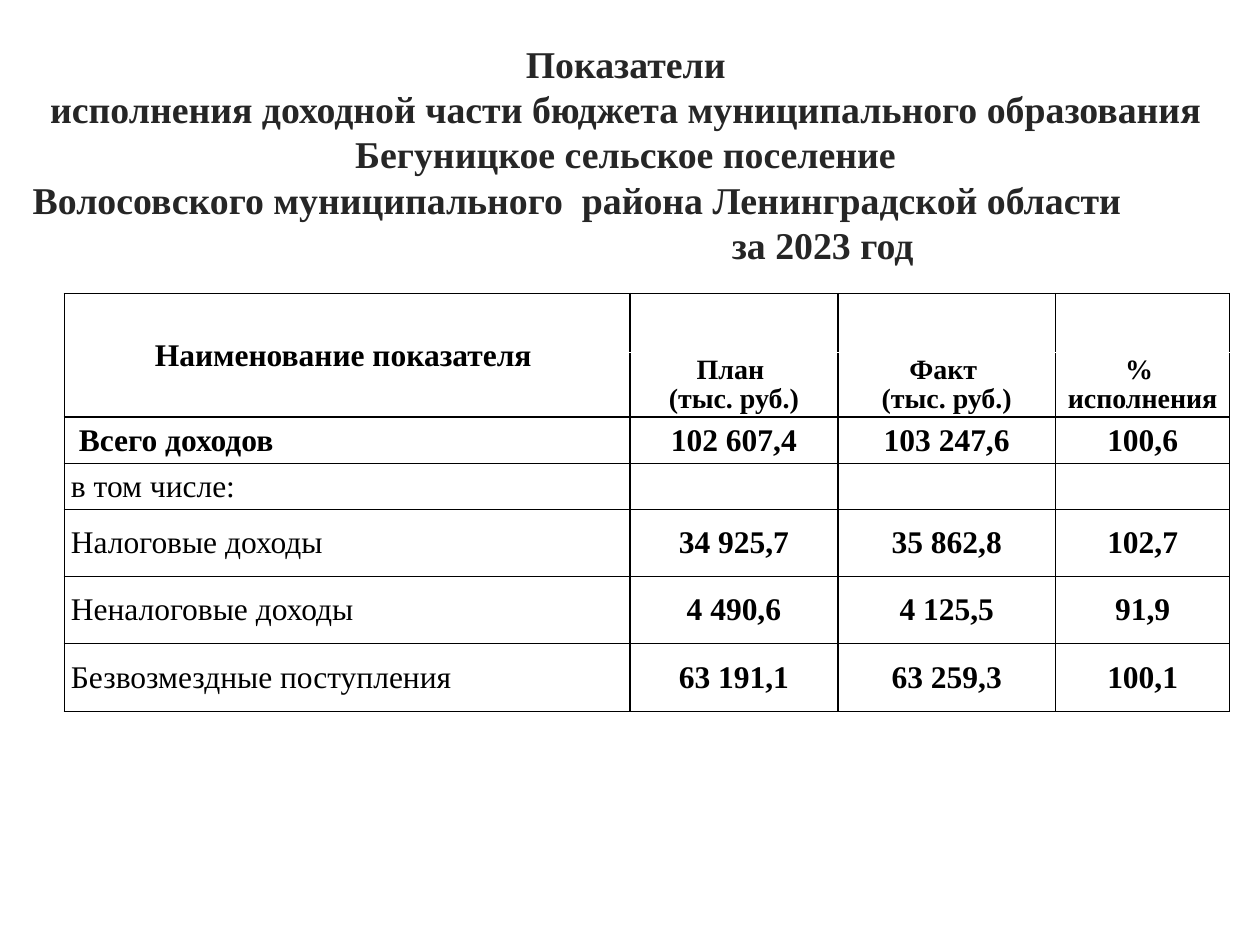
from lxml import etree
from pptx import Presentation
from pptx import util as u
from pptx.dml.color import RGBColor
from pptx.enum import text
from pptx.oxml.ns import qn

COLORS = {"title": "262626", "body": "000000", "cell": "FFFFFF", "border": "000000"}
FONT = "Times New Roman"
LEFT, CENTER = text.PP_ALIGN.LEFT, text.PP_ALIGN.CENTER

# Title lines: wording, alignment, left indent in cm
TITLE = [
    ("Показатели", CENTER, 0),
    ("исполнения доходной части бюджета муниципального образования", CENTER, 0),
    ("Бегуницкое сельское поселение", CENTER, 0),
    ("Волосовского муниципального  района Ленинградской области", LEFT, 0),
    ("за 2023 год", CENTER, 7.94),
]

# The header takes two rows, with units in the lower one
HEADER = [
    ["Наименование показателя ", "", "", ""],
    ["", "План \n(тыс. руб.)", "Факт \n(тыс. руб.)", "% \nисполнения"],
]
INCOME = [
    [" Всего доходов", "102 607,4", "103 247,6", "100,6"],
    ["в том числе:", "", "", ""],
    ["Налоговые доходы", "34 925,7", "35 862,8", "102,7"],
    ["Неналоговые доходы", "4 490,6", "4 125,5", "91,9"],
    ["Безвозмездные поступления", "63 191,1", "63 259,3", "100,1"],
]
COLUMN_WIDTHS = [11.4, 4.19, 4.39, 3.51]
ROW_HEIGHTS = [1.19, 1.25, 0.93, 0.93, 1.35, 1.35, 1.37]


def style(paragraph, size, color, bold, align):
    paragraph.alignment = align
    font = paragraph.font
    font.name, font.size, font.bold = FONT, u.Pt(size), bold
    font.color.rgb = RGBColor.from_string(COLORS[color])


def add_title(slide):
    box = slide.shapes.add_textbox(u.Cm(0.41), u.Cm(0.58), u.Cm(24.41), u.Cm(4.93))
    frame = box.text_frame
    frame.word_wrap = True
    frame.vertical_anchor = text.MSO_ANCHOR.BOTTOM
    frame.text = "\n".join(line for line, _, _ in TITLE)
    for paragraph, (_, align, indent) in zip(frame.paragraphs, TITLE):
        style(paragraph, 21.6, "title", True, align)
        paragraph.line_spacing = u.Pt(25.9)
        if indent:
            paragraph._p.get_or_add_pPr().set("marL", str(u.Cm(indent)))


def set_borders(cell, sides):
    properties = cell._tc.get_or_add_tcPr()
    for position, side in enumerate(sides):
        line = etree.Element(qn(f"a:ln{side}"), w=str(u.Pt(1)))
        fill = etree.SubElement(line, qn("a:solidFill"))
        etree.SubElement(fill, qn("a:srgbClr"), val=COLORS["border"])
        properties.insert(position, line)  # borders come before the fill


def fill_cell(cell, wording, size, bold, align, sides="LRTB"):
    cell.margin_left = cell.margin_right = u.Cm(0.13)
    cell.margin_top = cell.margin_bottom = 0
    cell.vertical_anchor = text.MSO_ANCHOR.MIDDLE
    cell.fill.solid()
    cell.fill.fore_color.rgb = RGBColor.from_string(COLORS["cell"])
    set_borders(cell, sides)
    cell.text = wording
    for paragraph in cell.text_frame.paragraphs:
        style(paragraph, size, "body", bold, align)
        if size == 16:
            paragraph.line_spacing = 0.96


def add_income_table(slide):
    rows = HEADER + INCOME
    table = slide.shapes.add_table(
        len(rows), len(COLUMN_WIDTHS), u.Cm(1.3), u.Cm(5.92),
        u.Cm(sum(COLUMN_WIDTHS)), u.Cm(sum(ROW_HEIGHTS))).table
    table.first_row = table.horz_banding = False
    for column, width in zip(table.columns, COLUMN_WIDTHS):
        column.width = u.Cm(width)
    for row, height in zip(table.rows, ROW_HEIGHTS):
        row.height = u.Cm(height)

    # Header: no line between its two rows
    for r, (row, sides) in enumerate(zip(HEADER, ("LRT", "LRB"))):
        for c, wording in enumerate(row):
            fill_cell(table.cell(r, c), wording, 16 if c else 18, True, CENTER,
                      sides if c else "LRTB")
    table.cell(0, 0).merge(table.cell(1, 0))

    # Income rows: only the total has a bold name
    for r, row in enumerate(INCOME):
        for c, wording in enumerate(row):
            fill_cell(table.cell(r + len(HEADER), c), wording, 18,
                      c > 0 or r == 0, CENTER if c else LEFT)


def main():
    deck = Presentation()
    deck.slide_width, deck.slide_height = u.Cm(25.4), u.Cm(19.05)
    slide = deck.slides.add_slide(deck.slide_layouts[6])
    add_title(slide)
    add_income_table(slide)
    deck.save("out.pptx")


if __name__ == "__main__":
    main()
